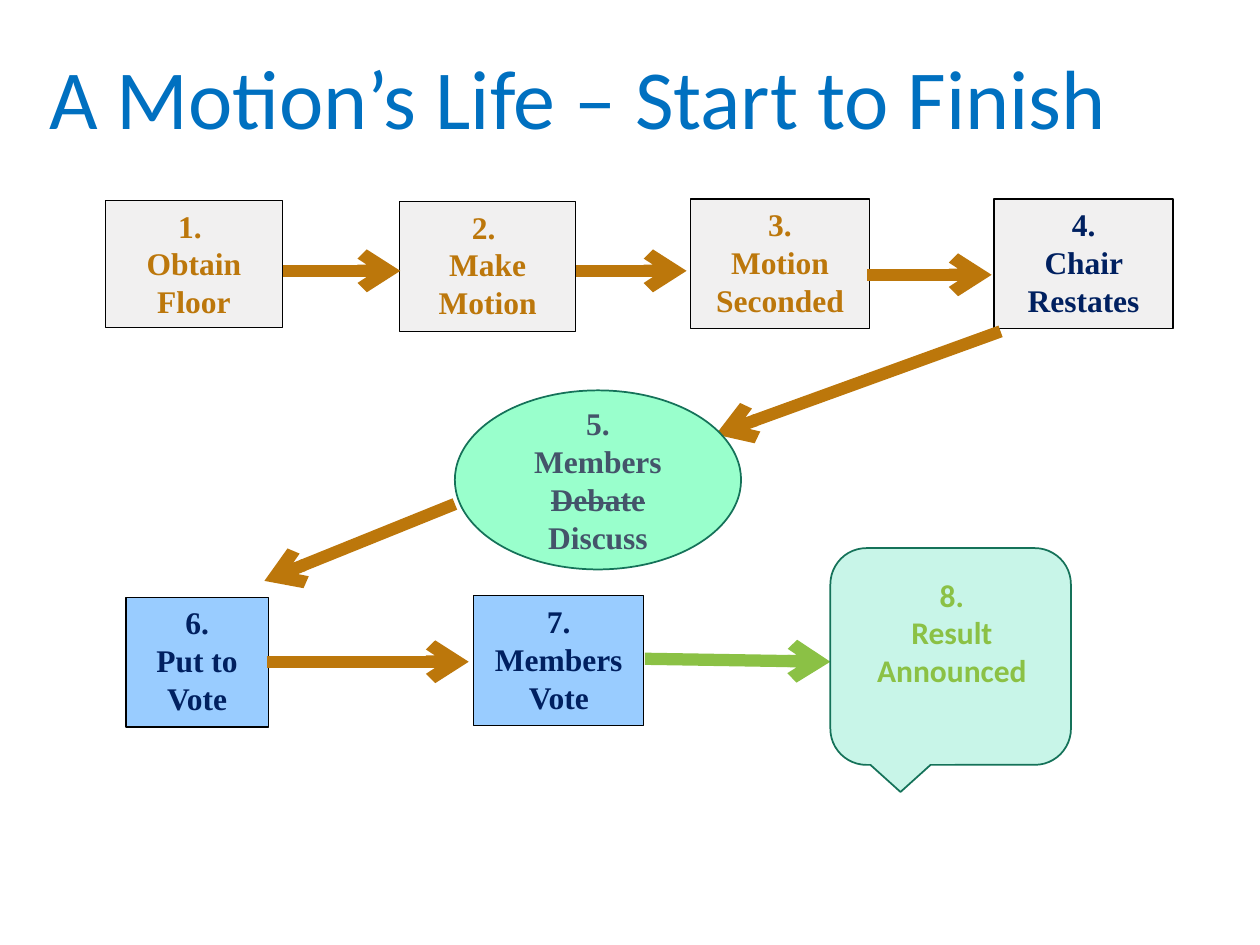
from dataclasses import dataclass

from lxml.etree import SubElement
from pptx import Presentation
from pptx.dml.color import RGBColor
from pptx.enum.shapes import MSO_CONNECTOR, MSO_SHAPE
from pptx.enum.text import MSO_ANCHOR, PP_ALIGN
from pptx.oxml.ns import qn
from pptx.util import Cm, Pt

COLORS = {
    "title": "0070C0",
    "ochre": "BC770B",
    "navy": "002060",
    "slate": "44546A",
    "lime": "8BC145",
    "black": "000000",
    "teal": "157259",
    "grey fill": "F1F0F0",
    "blue fill": "99CCFF",
    "mint fill": "99FFCC",
    "pale fill": "C8F5E8",
}
SERIF = "Times New Roman"
SANS = "Calibri"
BOX_HEIGHT = 2.62
TOP_ARROW_LENGTH = 2.51
TOP_ARROW_Y = 5.46


@dataclass
class Step:
    """A step of the motion; lengths in centimetres, struck words in tildes."""
    text: str
    left: float
    top: float
    width: float
    color: str
    fill: str
    height: float = BOX_HEIGHT
    line: str = "black"
    line_width: float = 0.75
    kind: MSO_SHAPE = MSO_SHAPE.RECTANGLE
    anchor: MSO_ANCHOR = MSO_ANCHOR.TOP


@dataclass
class Arrow:
    start_x: float
    start_y: float
    end_x: float
    end_y: float
    color: str = "ochre"


def top_arrow(left: float, y: float = TOP_ARROW_Y) -> Arrow:
    return Arrow(left, y, left + TOP_ARROW_LENGTH, y)


# Back to front: some arrows start under a box, others lie over its edge.
FLOW = [
    top_arrow(11.33),
    Step("3.\nMotion Seconded", 13.92, 4.01, 3.61, "ochre", "grey fill"),
    Step("2. \nMake Motion", 8.05, 4.06, 3.56, "ochre", "grey fill"),
    Step("4.\nChair Restates", 20.04, 4.01, 3.61, "navy", "grey fill"),
    Step("6.\nPut to Vote", 2.54, 12.04, 2.87, "navy", "blue fill"),
    Step("7.\nMembers Vote", 9.55, 12.01, 3.43, "navy", "blue fill"),
    top_arrow(5.56),
    Arrow(20.17, 6.68, 14.43, 8.76),
    Arrow(5.38, 13.34, 9.45, 13.34),
    Arrow(9.17, 10.16, 5.33, 11.71),
    Arrow(13, 13.28, 16.74, 13.34, "lime"),
    Step("5.\nMembers ~Debate ~Discuss", 9.17, 7.87, 5.77, "slate", "mint fill",
         3.61, "teal", 1, MSO_SHAPE.OVAL, MSO_ANCHOR.MIDDLE),
    Step("", 16.74, 11.05, 4.85, "lime", "pale fill",
         4.37, "teal", 1, MSO_SHAPE.ROUNDED_RECTANGULAR_CALLOUT),
    Step("1. \nObtain Floor", 2.13, 4.04, 3.56, "ochre", "grey fill", 2.57),
    top_arrow(17.48, 5.54),
]


def rgb(name: str) -> RGBColor:
    return RGBColor.from_string(COLORS[name])


def write_label(shape, text: str, color: str, font_name: str, anchor: MSO_ANCHOR) -> None:
    frame = shape.text_frame
    frame.word_wrap = True
    frame.vertical_anchor = anchor
    paragraph = frame.paragraphs[0]
    paragraph.alignment = PP_ALIGN.CENTER
    parts = text.split("~")
    paragraph.text = parts[0]
    for index, part in enumerate(parts[1:]):
        run = paragraph.add_run()
        run.text = part
        if index % 2 == 0:
            run.font._element.set("strike", "sngStrike")
    for run in paragraph.runs:
        run.font.name = font_name
        run.font.size = Pt(18)
        run.font.bold = True
        run.font.color.rgb = rgb(color)


def draw_step(slide, step: Step) -> None:
    shape = slide.shapes.add_shape(
        step.kind, Cm(step.left), Cm(step.top), Cm(step.width), Cm(step.height))
    shape.shadow.inherit = False
    shape.fill.solid()
    shape.fill.fore_color.rgb = rgb(step.fill)
    shape.line.color.rgb = rgb(step.line)
    shape.line.width = Pt(step.line_width)
    if step.text:
        write_label(shape, step.text, step.color, SERIF, step.anchor)


def draw_arrow(slide, arrow: Arrow) -> None:
    connector = slide.shapes.add_connector(
        MSO_CONNECTOR.STRAIGHT, Cm(arrow.start_x), Cm(arrow.start_y),
        Cm(arrow.end_x), Cm(arrow.end_y))
    connector.line.color.rgb = rgb(arrow.color)
    connector.line.width = Pt(7)
    SubElement(connector.line._get_or_add_ln(), qn("a:tailEnd"), type="arrow")
    SubElement(connector._element.spPr, qn("a:effectLst"))


def write_title(slide) -> None:
    title = slide.shapes.title
    title.left, title.top, title.width, title.height = Cm(0.74), Cm(0.86), Cm(23.22), Cm(2.39)
    frame = title.text_frame
    frame.text = "A Motion’s Life – Start to Finish"
    frame.vertical_anchor = MSO_ANCHOR.MIDDLE
    paragraph = frame.paragraphs[0]
    paragraph.alignment = PP_ALIGN.LEFT
    paragraph.line_spacing = 0.9
    font = paragraph.runs[0].font
    font.name = SANS
    font.size = Pt(48)
    font.color.rgb = rgb("title")


def main() -> None:
    presentation = Presentation()
    presentation.slide_width, presentation.slide_height = Cm(25.4), Cm(19.05)
    slide = presentation.slides.add_slide(presentation.slide_layouts[5])
    write_title(slide)
    for element in FLOW:
        if isinstance(element, Step):
            draw_step(slide, element)
        else:
            draw_arrow(slide, element)
    result = slide.shapes.add_textbox(Cm(16.94), Cm(11.48), Cm(4.5), Cm(3.4))
    write_label(result, "8.\nResult Announced", "lime", SANS, MSO_ANCHOR.TOP)
    presentation.save("out.pptx")


if __name__ == "__main__":
    main()
